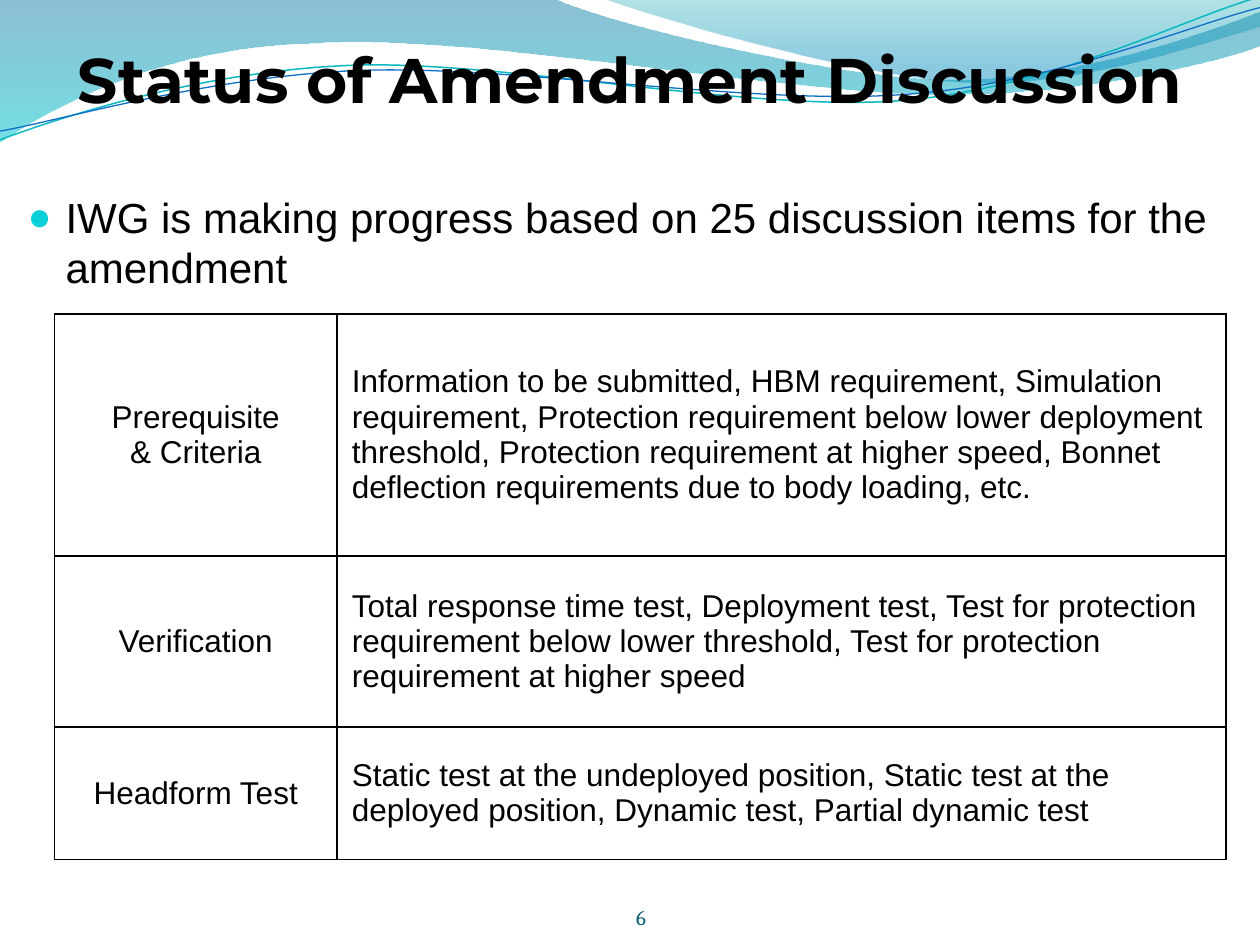
from lxml.etree import SubElement as Sub
from pptx import Presentation
from pptx.dml.color import RGBColor as Rgb
from pptx.enum.text import MSO_ANCHOR as Anchor, MSO_AUTO_SIZE as Auto, PP_ALIGN as Align
from pptx.oxml.ns import qn
from pptx.util import Pt

BLACK = "000000"
TEAL = [(0, 0), (316.8, -0.7),
        (342.7, 12.2, 478.1, 45.4, 545.8, 45.4),
        (614.2, 45.4, 689.8, 18.7, 720, 6.5), (720.7, 25.9),
        (707.8, 31.7, 626.4, 54.7, 537.1, 54),
        (447.8, 54, 275, 20.2, 185, 24.5),
        (92.9, 25.9, 33.1, 59.8, -0.7, 81.4)]
MINT = [(344.9, -0.7),
        (366.5, 7.9, 491, 44.6, 553.7, 46.8),
        (616.3, 49.7, 691.9, 23, 720, 15.1), (720, 0)]
HIGH = [(0, 79.9),
        (34.6, 67, 113.8, 41, 199.4, 37.4),
        (284.4, 33.8, 427, 64.1, 513.4, 57.6),
        (599.8, 51.1, 675.4, 10.8, 718.6, -1.4)]
LOW = [(0, 74.9),
       (33.8, 69.1, 118.1, 43.9, 203.8, 40.3),
       (290.2, 36.7, 429.8, 60.5, 516.2, 54),
       (601.9, 48.2, 677.5, 15.1, 720, 4.3)]
ROWS = [
    ("Prerequisite\n& Criteria",
     "Information to be submitted, HBM requirement, Simulation requirement, "
     "Protection requirement below lower deployment threshold, Protection "
     "requirement at higher speed, Bonnet deflection requirements due to "
     "body loading, etc."),
    ("Verification",
     "Total response time test, Deployment test, Test for protection "
     "requirement below lower threshold, Test for protection requirement "
     "at higher speed"),
    ("Headform Test",
     "Static test at the undeployed position, Static test at the deployed "
     "position, Dynamic test, Partial dynamic test"),
]


def tint(color, code):
    """Set a colour from a hex string."""
    color.rgb = Rgb.from_string(code)


def write(frame, text, size, face, code=BLACK, align=Align.LEFT, bold=False):
    """Fill a text frame with evenly styled paragraphs."""
    frame.text = text
    for para in frame.paragraphs:
        para.alignment = align
        font = para.font
        font.size, font.name, font.bold = Pt(size), face, bold
        tint(font.color, code)


def inset(item, left, top, right, low):
    """Set the margins of a text frame or cell."""
    item.margin_left, item.margin_top = Pt(left), Pt(top)
    item.margin_right, item.margin_bottom = Pt(right), Pt(low)


def place(shape, left, top, width, height):
    """Move and size a shape."""
    shape.left, shape.top = Pt(left), Pt(top)
    shape.width, shape.height = Pt(width), Pt(height)


def curve(slide, steps, close):
    """Draw an outline of lines and cubic curves without a shadow."""
    ends = [(Pt(step[-2]), Pt(step[-1])) for step in steps]
    pen = slide.shapes.build_freeform(*ends[0])
    pen.add_line_segments(ends[1:], close=close)
    shape = pen.convert_to_shape()
    shape.shadow.inherit = False
    lines = list(shape.element.spPr.iter(qn("a:lnTo")))
    for line, step in zip(lines, steps[1:]):
        if len(step) == 6:
            bend = line.makeelement(qn("a:cubicBezTo"))
            for x, y in zip(step[::2], step[1::2]):
                Sub(bend, qn("a:pt"), x=str(Pt(x) - shape.left),
                    y=str(Pt(y) - shape.top))
            line.getparent().replace(line, bend)
    return shape


def wave(slide, steps, stops):
    """Draw a wave with a clear gradient from top to bottom."""
    shape = curve(slide, steps, True)
    shape.line.fill.background()
    fill = shape.fill
    fill.gradient()
    fill.gradient_angle = 270
    for stop, (pos, code, _) in zip(fill.gradient_stops, stops):
        stop.position = pos
        tint(stop.color, code)
    marks = shape.element.spPr.iter(qn("a:srgbClr"))
    for mark, (_, _, alpha) in zip(marks, stops):
        Sub(mark, qn("a:alpha"), val=str(alpha * 1000))


def strand(slide, steps, code, width):
    """Draw a thin open curve."""
    shape = curve(slide, steps, False)
    shape.fill.background()
    shape.line.width = Pt(width)
    tint(shape.line.color, code)


def head(shape, text):
    """Set the slide title."""
    place(shape, 0, 3.6, 720, 79.2)
    frame = shape.text_frame
    frame.auto_size = Auto.NONE
    frame.vertical_anchor = Anchor.MIDDLE
    inset(frame, 0, 3.6, 0, 0)
    write(frame, text, 36, "Montserrat", align=Align.CENTER, bold=True)


def point(shape, text):
    """Set the bullet above the table."""
    place(shape, 8.64, 105.84, 702.72, 62.64)
    frame = shape.text_frame
    frame.auto_size = Auto.NONE
    write(frame, text, 24, "Arial")
    props = frame.paragraphs[0]._p.get_or_add_pPr()
    props.set("marL", str(Pt(21.6)))
    props.set("indent", str(Pt(-21.6)))
    Sub(Sub(props, qn("a:buClr")), qn("a:srgbClr"), val="0BD0D9")
    Sub(props, qn("a:buSzPct"), val="95000")
    Sub(props, qn("a:buChar"), char="●")
    props.append(props.find(qn("a:defRPr")))


def number(slide, text):
    """Add the page number."""
    box = slide.shapes.add_textbox(Pt(343.2), Pt(502.56), Pt(25.92), Pt(28.8))
    frame = box.text_frame
    frame.word_wrap = True
    frame.vertical_anchor = Anchor.BOTTOM
    inset(frame, 0, 0, 0, 0)
    write(frame, text, 12, "Cambria", "045D75", Align.RIGHT)


def rule(cell):
    """Clear the fill of a cell and rule its four sides."""
    props = cell._tc.get_or_add_tcPr()
    for side in ("lnL", "lnR", "lnT", "lnB"):
        line = Sub(props, qn("a:" + side), w=str(Pt(1)))
        Sub(Sub(line, qn("a:solidFill")), qn("a:srgbClr"), val=BLACK)
    cell.fill.background()


def grid(slide, rows, widths, heights):
    """Add the table of discussion items."""
    table = slide.shapes.add_table(len(rows), len(widths), Pt(31.2), Pt(179.4),
                                   Pt(sum(widths)), Pt(sum(heights))).table
    table.first_row = table.horz_banding = False
    for col, width in zip(table.columns, widths):
        col.width = Pt(width)
    for row, height, texts in zip(table.rows, heights, rows):
        row.height = Pt(height)
        for cell, text, align, left in zip(row.cells, texts,
                                           (Align.CENTER, Align.LEFT), (7.2, 8.64)):
            write(cell.text_frame, text, 18, "Arial", align=align)
            cell.vertical_anchor = Anchor.MIDDLE
            inset(cell, left, 3.6, 7.2, 3.6)
            rule(cell)


def main():
    """Build and save the slide."""
    deck = Presentation()
    deck.slide_width, deck.slide_height = Pt(720), Pt(540)
    slide = deck.slides.add_slide(deck.slide_layouts[1])
    title, body = slide.placeholders
    wave(slide, TEAL, [(0, "0074A1", 45), (1, "00C6CF", 55)])
    wave(slide, MINT, [(0, "00A1A9", 30), (0.8, "008BBF", 45)])
    strand(slide, HIGH, "0AB8BF", 0.85)
    strand(slide, LOW, "0F6FC6", 0.75)
    tree = slide.shapes.element
    tree.append(title.element)
    head(title, "Status of Amendment Discussion")
    number(slide, "6")
    grid(slide, ROWS, (161.28, 508), (138.24, 97.92, 75.6))
    tree.append(body.element)
    point(body, "IWG is making progress based on 25 discussion items "
                "for the amendment")
    deck.save("out.pptx")


if __name__ == "__main__":
    main()
